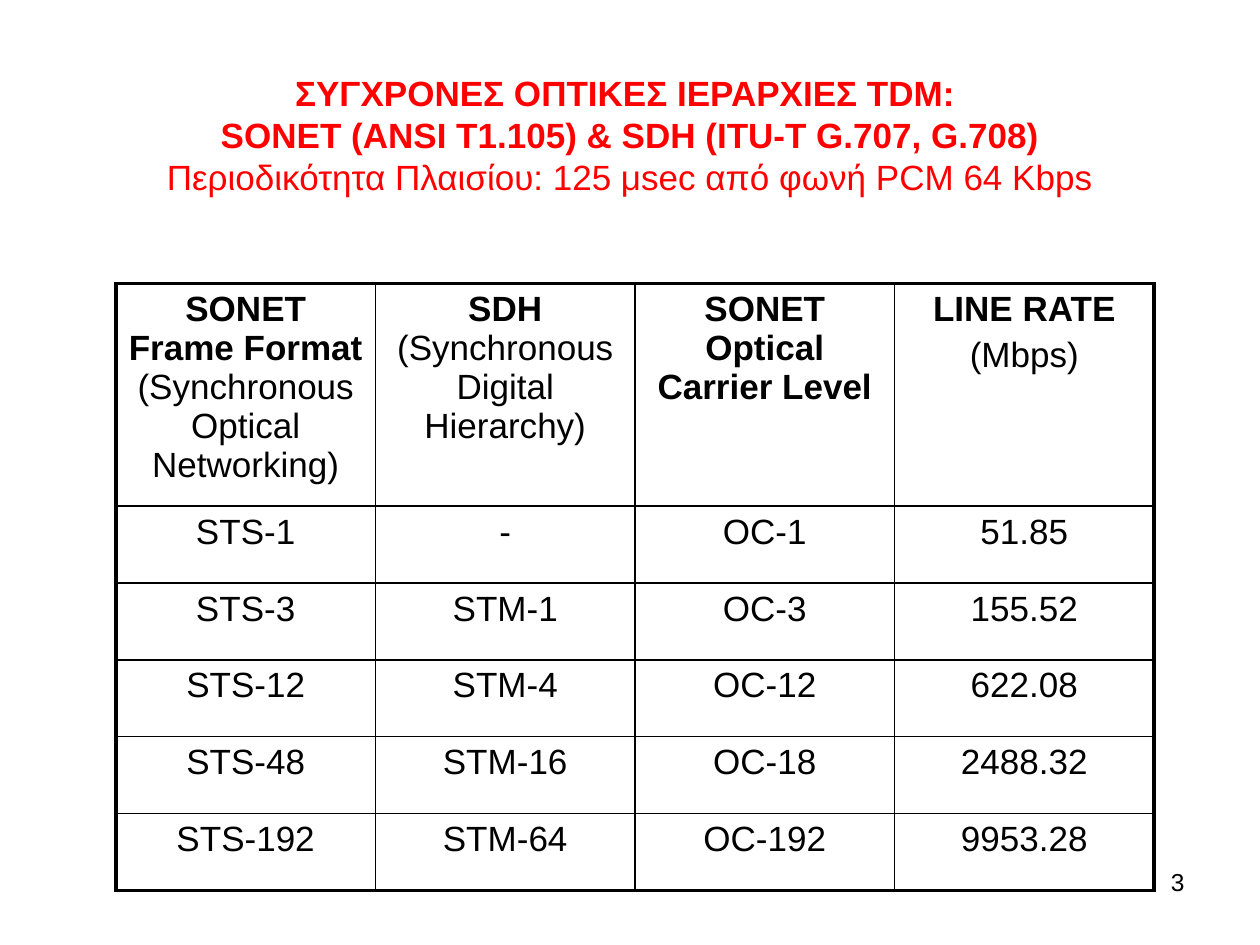
from lxml import etree
from pptx import Presentation
from pptx.dml.color import RGBColor
from pptx.enum.text import MSO_ANCHOR, PP_ALIGN
from pptx.oxml.ns import qn
from pptx.util import Inches, Pt

BLACK = RGBColor(0x00, 0x00, 0x00)
RED = RGBColor(0xFF, 0x00, 0x00)
LEFT, CENTER, RIGHT = PP_ALIGN.LEFT, PP_ALIGN.CENTER, PP_ALIGN.RIGHT
MIDDLE, TOP = MSO_ANCHOR.MIDDLE, MSO_ANCHOR.TOP

BODY = {"name": "Arial", "size": Pt(20), "bold": False}
STRONG = {**BODY, "bold": True}
SMALL = {**BODY, "size": Pt(14)}

THIN, THICK = Pt(1), Pt(2.25)
HEADER_HEIGHT, ROW_HEIGHT, COLUMN_WIDTH = 1.65, 0.61, 2.06

TITLE_LINES = [
    ("ΣΥΓΧΡΟΝΕΣ ΟΠΤΙΚΕΣ ΙΕΡΑΡΧΙΕΣ TDM: ", STRONG),
    ("SONET (ANSI T1.105) & SDH (ITU-T G.707, G.708)", STRONG),
    ("Περιοδικότητα Πλαισίου: 125 μsec από φωνή PCM 64 Kbps", BODY),
]

# Each header cell is a list of paragraphs, each paragraph a list of spans.
HEADERS = [
    [[("SONET Frame Format ", STRONG), ("(Synchronous Optical Networking)", BODY)]],
    [[("SDH ", STRONG), ("(Synchronous Digital Hierarchy)", BODY)]],
    [[("SONET Optical Carrier Level", STRONG)]],
    [[("LINE RATE", STRONG)], [("(Mbps)", BODY)]],
]

RATES = [
    ("STS-1", "-", "OC-1", "51.85"),
    ("STS-3", "STM-1", "OC-3", "155.52"),
    ("STS-12", "STM-4", "OC-12", "622.08"),
    ("STS-48", "STM-16", "OC-18", "2488.32"),
    ("STS-192", "STM-64", "OC-192", "9953.28"),
]


def add_span(para, text, style, color):
    span = para.add_run()
    span.text = text
    for name, value in style.items():
        setattr(span.font, name, value)
    span.font.color.rgb = color


def add_text_box(page, place, lines, color, align, anchor):
    """Add one paragraph whose lines are parted by line breaks."""
    box = page.shapes.add_textbox(*(Inches(length) for length in place))
    frame = box.text_frame
    frame.word_wrap = True
    frame.vertical_anchor = anchor
    para = frame.paragraphs[0]
    para.alignment = align
    for index, (text, style) in enumerate(lines):
        if index:
            para.add_line_break()
        add_span(para, text, style, color)


def fill_cell(cell, paragraphs):
    cell.fill.background()
    frame = cell.text_frame
    for index, spans in enumerate(paragraphs):
        para = frame.add_paragraph() if index else frame.paragraphs[0]
        para.alignment = CENTER
        para.space_before = Pt(4)
        for text, style in spans:
            add_span(para, text, style, BLACK)


def set_borders(cell, widths):
    """Draw the borders, which must stand before the fill in the cell XML."""
    properties = cell._tc.get_or_add_tcPr()
    for index, (side, width) in enumerate(widths.items()):
        line = etree.Element(qn(f"a:{side}"), w=str(width))
        fill = etree.SubElement(line, qn("a:solidFill"))
        etree.SubElement(fill, qn("a:srgbClr"), val=str(BLACK))
        properties.insert(index, line)


def add_rate_table(page):
    rows = HEADERS, *([[[(text, BODY)]] for text in rate] for rate in RATES)
    row_count, column_count = len(rows), len(HEADERS)
    height = HEADER_HEIGHT + ROW_HEIGHT * len(RATES)
    table = page.shapes.add_table(
        row_count, column_count, Inches(0.92), Inches(2.25),
        Inches(COLUMN_WIDTH * column_count), Inches(height)).table
    table.first_row = table.horz_banding = False
    for column in table.columns:
        column.width = Inches(COLUMN_WIDTH)
    for r, row in enumerate(rows):
        table.rows[r].height = Inches(ROW_HEIGHT if r else HEADER_HEIGHT)
        for c, paragraphs in enumerate(row):
            cell = table.cell(r, c)
            fill_cell(cell, paragraphs)
            set_borders(cell, {
                "lnL": THIN if c else THICK,
                "lnR": THIN if c < column_count - 1 else THICK,
                "lnT": THIN if r else THICK,
                "lnB": THIN if r < row_count - 1 else THICK,
            })


def main():
    deck = Presentation()
    deck.slide_width, deck.slide_height = Inches(10), Inches(7.5)
    page = deck.slides.add_slide(deck.slide_layouts[6])
    add_text_box(page, (7.17, 6.83, 2.33, 0.52), [("3", SMALL)], BLACK, RIGHT, TOP)
    add_text_box(page, (0, 0.3, 10, 1.53), TITLE_LINES, RED, CENTER, MIDDLE)
    add_rate_table(page)
    deck.save("out.pptx")


if __name__ == "__main__":
    main()
